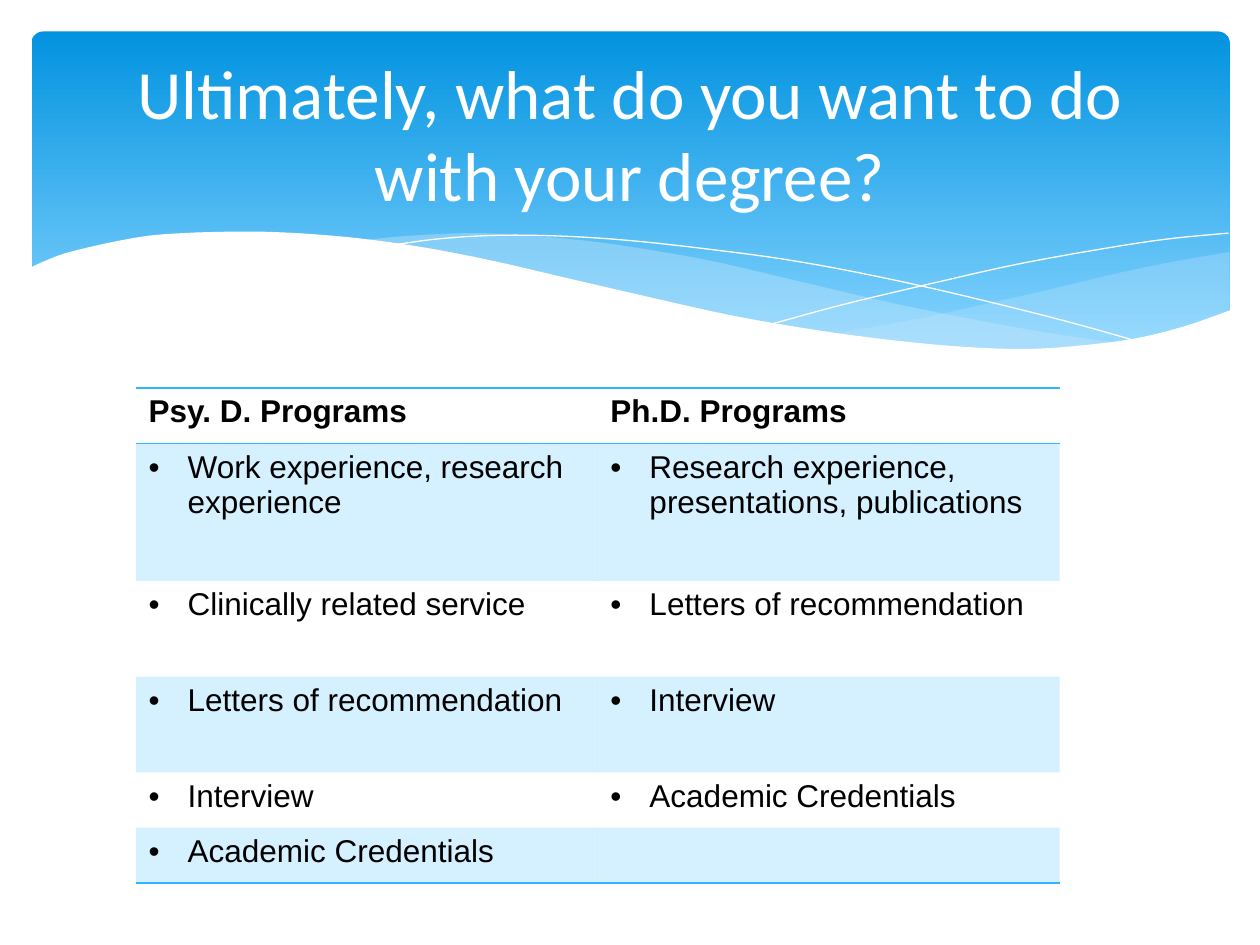
from dataclasses import dataclass

from lxml import etree
from pptx import Presentation, util as u
from pptx.dml.color import RGBColor
from pptx.enum import shapes, text
from pptx.oxml.ns import qn


@dataclass(frozen=True)
class Theme:
    white: str = "FFFFFF"
    ink: str = "000000"
    sky_top: str = "0293E0"
    sky_bottom: str = "81D2FE"
    mist: str = "C6E7FC"
    accent: str = "31B6FD"
    title_font: str = "Calibri"
    body_font: str = "Arial"
    title_size: float = 39.5
    body_size: float = 18
    rule: float = 1
    thin_line: float = 0.75
    band_opacity: int = 20
    no_table_style: str = "{2D5ABB26-0587-4C30-8999-92F81FD0307C}"


theme = Theme()
presentation = Presentation()
presentation.slide_width, presentation.slide_height = u.Inches(10), u.Inches(7.5)
slide = presentation.slides.add_slide(presentation.slide_layouts[6])

# Every length below counts columns and rows of a 100 by 75 grid.
COLUMN = presentation.slide_width / 100
ROW = presentation.slide_height / 75


def place(left, top, width, height):
    """Turn grid columns and rows into left, top, width and height."""
    return [u.Emu(round(n * unit)) for n, unit in
            zip((left, top, width, height), (COLUMN, ROW, COLUMN, ROW))]


def add_wave(group, curves, fill=None, opacity=100, steps=6):
    """Draw Catmull-Rom curves end to end: a filled outline, or a thin open line."""
    outline = []
    for curve in curves:
        padded = [curve[0], *curve, curve[-1]]
        for a, b, c, d in zip(padded, padded[1:], padded[2:], padded[3:]):
            for t in (step / steps for step in range(steps)):
                outline.append([
                    (2 * q + (r - p) * t + (2 * p - 5 * q + 4 * r - s) * t**2
                     + (3 * q - p - 3 * r + s) * t**3) / 2
                    for p, q, r, s in zip(a, b, c, d)])
        outline.append(curve[-1])
    points = [(x * COLUMN, y * ROW) for x, y in outline]
    builder = group.shapes.build_freeform(*points[0])
    builder.add_line_segments(points[1:], close=fill is not None)
    wave = builder.convert_to_shape()
    wave.shadow.inherit = False
    if fill:
        wave.fill.solid()
        wave.fill.fore_color.rgb = RGBColor.from_string(fill)
        for color in wave._element.spPr.iter(qn("a:srgbClr")):
            etree.SubElement(color, qn("a:alpha"), val=str(opacity * 1000))
        wave.line.fill.background()
    else:
        wave.fill.background()
        wave.line.color.rgb = RGBColor.from_string(theme.white)
        wave.line.width = u.Pt(theme.thin_line)


# Header panel
header = slide.shapes.add_shape(
    shapes.MSO_SHAPE.ROUNDED_RECTANGLE, *place(2.5, 2.5, 95.1, 27))
header.adjustments[0] = 0.034
header.shadow.inherit = False
header.line.fill.background()
header.fill.gradient()
header.fill.gradient_angle = 270
for stop, color, position in zip(header.fill.gradient_stops,
                                 (theme.sky_top, theme.sky_bottom), (0, 0.9)):
    stop.color.rgb = RGBColor.from_string(color)
    stop.position = position

# Waves along the foot of the header
waves = slide.shapes.add_group_shape()
right_swell = [
    [(97.6, 20), (93.5, 20.7), (89.1, 21.6), (83.2, 23), (77.9, 24.2),
     (72.9, 25.3), (66.1, 26.5)],
    [(66.1, 26.5), (70.5, 27.1), (74.5, 27.5), (80.3, 27.8), (85.4, 27.7),
     (89.7, 27), (93.5, 26.2), (97.6, 24.7)],
]
middle_swell = [
    [(89.3, 27.3), (83.7, 26.5), (77.5, 25.4), (70.6, 24), (62.9, 22.2),
     (56.9, 20.8), (51.4, 19.8), (46.5, 19.1), (42, 18.7), (38, 18.5),
     (34.4, 18.6), (31.3, 18.8), (28.6, 19.1)],
    [(28.6, 19.1), (34.2, 19.9), (40.4, 21.1), (44.9, 22.2), (53, 24),
     (60.1, 25.5), (66.5, 26.6), (72.2, 27.4), (77.3, 27.7), (81.8, 27.8),
     (85.7, 27.7), (89.3, 27.3)],
]
falling_line = [
    (30.9, 19.5), (34.4, 19), (38.7, 18.7), (43.3, 18.7), (48.9, 19),
    (55.6, 19.7), (63.6, 20.8), (72.7, 22.6), (83.1, 25.1), (90.7, 27.2)]
rising_line = [
    (61.3, 25.7), (67.2, 24.1), (74.8, 22.3), (80.6, 21), (86.6, 19.9),
    (92.4, 19), (97.5, 18.5)]
white_foot = [
    [(97.7, 24.6), (94, 25.9), (89.9, 26.9), (85, 27.5), (80.9, 27.7),
     (76.1, 27.5), (70.8, 27), (64.8, 26.2), (57.9, 25), (50.3, 23.3),
     (44.7, 22), (39.1, 20.7), (34, 19.7), (29.2, 19), (25, 18.6),
     (21.1, 18.4), (17.7, 18.4), (14.6, 18.5), (11.9, 18.7), (9.5, 19.1),
     (7.6, 19.5), (5.2, 20.1), (3.6, 20.7), (2.3, 21.3)],
    [(2.3, 32.9), (97.7, 32.9)],
]
add_wave(waves, right_swell, theme.mist, opacity=29)
add_wave(waves, middle_swell, theme.mist, opacity=40)
add_wave(waves, [falling_line])
add_wave(waves, [rising_line])
add_wave(waves, white_foot, theme.white)

# Title
title = slide.shapes.add_textbox(*place(5, 3.7, 90, 13.7)).text_frame
title.word_wrap = True
title.vertical_anchor = text.MSO_ANCHOR.MIDDLE
paragraph = title.paragraphs[0]
paragraph.alignment = text.PP_ALIGN.CENTER
run = paragraph.add_run()
run.text = "Ultimately, what do you want to do with your degree?"
run.font.name, run.font.size = theme.title_font, u.Pt(theme.title_size)
run.font.color.rgb = RGBColor.from_string(theme.white)

# Programs table
programs = [
    ("Psy. D. Programs", "Ph.D. Programs"),
    ("Work experience, research experience",
     "Research experience, presentations, publications"),
    ("Clinically related service", "Letters of recommendation"),
    ("Letters of recommendation", "Interview"),
    ("Interview", "Academic Credentials"),
    ("Academic Credentials", ""),
]
row_heights = [4.4, 10.9, 7.6, 7.6, 4.4, 4.4]
ruled_sides = {0: ("lnB", "lnT"), len(programs) - 1: ("lnB",)}
table = slide.shapes.add_table(
    len(programs), 2, *place(10.8, 30.8, 73.3, sum(row_heights))).table
table.first_row = table.horz_banding = False
table._tbl.tblPr.find(qn("a:tableStyleId")).text = theme.no_table_style
for row, height in zip(table.rows, row_heights):
    row.height = u.Emu(round(height * ROW))

for row_index, entries in enumerate(programs):
    for column_index, entry in enumerate(entries):
        cell = table.cell(row_index, column_index)
        properties = cell._tc.get_or_add_tcPr()
        if row_index % 2:
            cell.fill.solid()
            cell.fill.fore_color.rgb = RGBColor.from_string(theme.accent)
            for color in properties.iter(qn("a:srgbClr")):
                etree.SubElement(color, qn("a:alpha"),
                                 val=str(theme.band_opacity * 1000))
        else:
            cell.fill.background()
        for side in ruled_sides.get(row_index, ()):
            border = etree.Element(qn(f"a:{side}"), w=str(u.Pt(theme.rule)))
            solid = etree.SubElement(border, qn("a:solidFill"))
            etree.SubElement(solid, qn("a:srgbClr"), val=theme.accent)
            properties.insert(0, border)

        paragraph = cell.text_frame.paragraphs[0]
        paragraph.font.size = u.Pt(theme.body_size)
        if not entry:
            continue
        run = paragraph.add_run()
        run.text = entry
        run.font.name, run.font.size = theme.body_font, u.Pt(theme.body_size)
        run.font.bold = row_index == 0
        run.font.color.rgb = RGBColor.from_string(theme.ink)
        if row_index:
            bullet = paragraph._p.get_or_add_pPr()
            indent = round(3.1 * COLUMN)
            bullet.set("marL", str(indent))
            bullet.set("indent", str(-indent))
            bullet_color = etree.Element(qn("a:buClr"))
            etree.SubElement(bullet_color, qn("a:srgbClr"), val=theme.ink)
            bullet.insert(0, bullet_color)
            bullet.insert(1, etree.Element(qn("a:buFont"), typeface=theme.body_font))
            bullet.insert(2, etree.Element(qn("a:buChar"), char="•"))

presentation.save("out.pptx")
